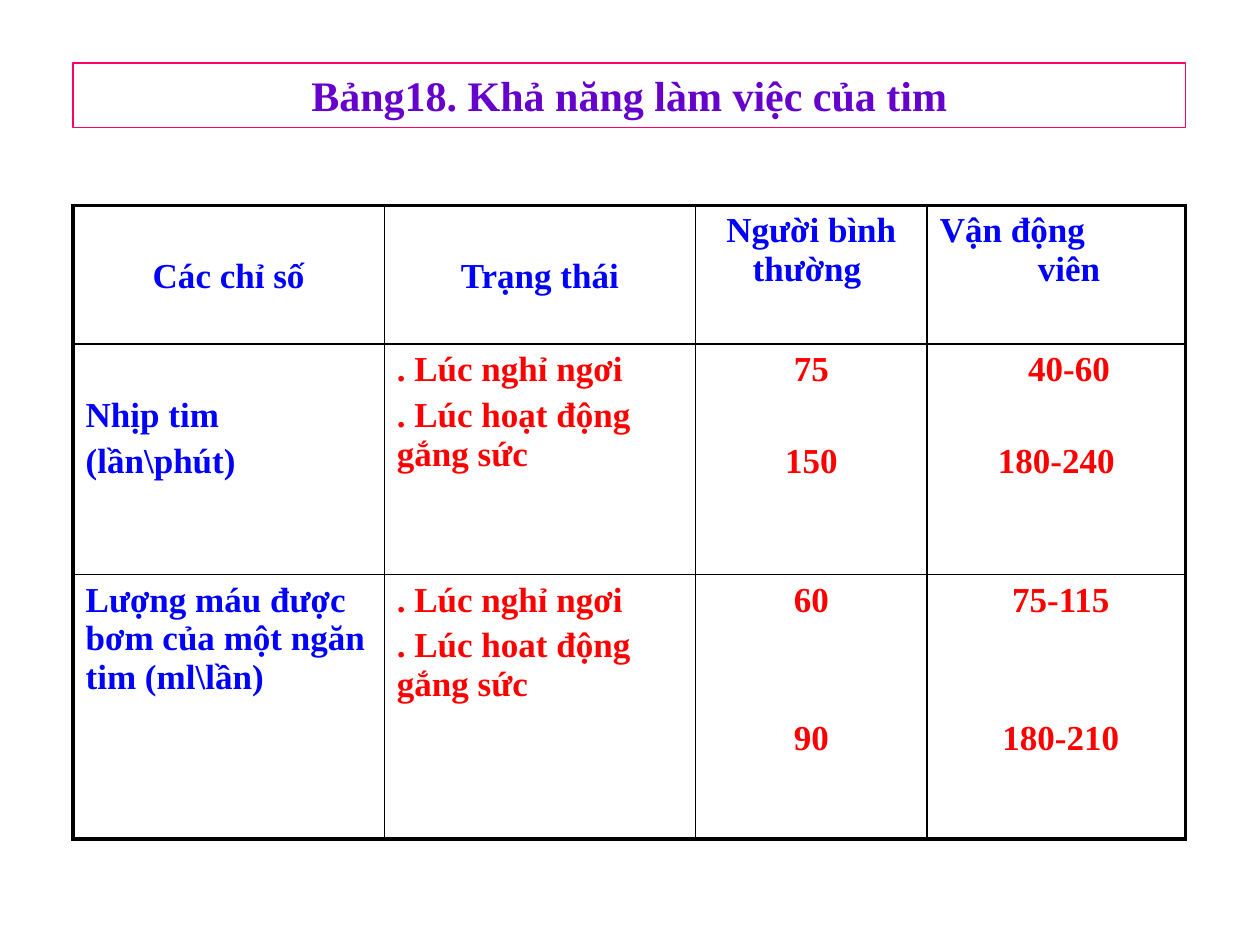
"""Build a slide with a table on the working capacity of the heart."""
from lxml import etree
from pptx import Presentation
from pptx.dml.color import RGBColor
from pptx.enum.shapes import MSO_SHAPE
from pptx.enum.text import MSO_ANCHOR, PP_ALIGN
from pptx.oxml.ns import qn
from pptx.util import Inches, Pt

LEFT, CENTER = PP_ALIGN.LEFT, PP_ALIGN.CENTER
MIDDLE = MSO_ANCHOR.MIDDLE
RECTANGLE = MSO_SHAPE.RECTANGLE
FONT = "Times New Roman"
WHITE = RGBColor(0xFF, 0xFF, 0xFF)
BLACK = RGBColor(0, 0, 0)
BLUE = RGBColor(0, 0, 0xFF)
RED = RGBColor(0xFF, 0, 0)
PURPLE = RGBColor(0x66, 0, 0xCC)
PINK = RGBColor(0xFF, 0, 0x66)

TITLE = "Bảng18. Khả năng làm việc của tim"
COLUMN_WIDTHS = [2.47, 2.47, 1.84, 2.05]
ROW_HEIGHTS = [1.1, 1.83, 2.1]
TEXT_SIZE = 20
PARAGRAPH_GAP = 4
LINE_STEP = 26.3
INNER_BORDER, OUTER_BORDER = 1, 2.25

# Each cell: colour, empty lines above, paragraphs of (text, alignment, space before, indent)
AFTER_ONE = PARAGRAPH_GAP + LINE_STEP
AFTER_TWO = PARAGRAPH_GAP + 2 * LINE_STEP
ROWS = [
    [
        (BLUE, 1, [("Các chỉ số", CENTER, PARAGRAPH_GAP, 0)]),
        (BLUE, 1, [("Trạng thái", CENTER, PARAGRAPH_GAP, 0)]),
        (BLUE, 0, [("Người bình thường ", CENTER, PARAGRAPH_GAP, 0)]),
        (BLUE, 0, [("Vận động", LEFT, PARAGRAPH_GAP, 0), ("viên", CENTER, 0, 0.2)]),
    ],
    [
        (BLUE, 1, [("Nhịp tim", LEFT, PARAGRAPH_GAP, 0),
                   ("(lần\\phút)", LEFT, PARAGRAPH_GAP, 0)]),
        (RED, 0, [(". Lúc nghỉ ngơi", LEFT, PARAGRAPH_GAP, 0),
                  (". Lúc hoạt động gắng sức", LEFT, PARAGRAPH_GAP, 0)]),
        (RED, 0, [("75", CENTER, PARAGRAPH_GAP, 0), ("150", CENTER, AFTER_ONE, 0)]),
        (RED, 0, [("40-60", CENTER, PARAGRAPH_GAP, 0.2),
                  ("180-240", CENTER, AFTER_ONE, 0)]),
    ],
    [
        (BLUE, 0, [("Lượng máu được bơm của một ngăn tim (ml\\lần)", LEFT, PARAGRAPH_GAP, 0)]),
        (RED, 0, [(". Lúc nghỉ ngơi", LEFT, PARAGRAPH_GAP, 0),
                  (". Lúc hoat động gắng sức", LEFT, PARAGRAPH_GAP, 0)]),
        (RED, 0, [("60", CENTER, PARAGRAPH_GAP, 0), ("90", CENTER, AFTER_TWO, 0)]),
        (RED, 0, [("75-115", CENTER, PARAGRAPH_GAP, 0.07),
                  ("180-210", CENTER, AFTER_TWO, 0.07)]),
    ],
]


def add_text(paragraph, text, size, color, alignment):
    paragraph.alignment = alignment
    run = paragraph.add_run()
    run.text = text
    run.font.name = FONT
    run.font.size = Pt(size)
    run.font.bold = True
    run.font.color.rgb = color


def set_borders(cell, widths):
    properties = cell._tc.get_or_add_tcPr()
    for position, (side, width) in enumerate(widths.items()):
        border = etree.Element(qn(f"a:ln{side}"), w=str(Pt(width)))
        fill = etree.SubElement(border, qn("a:solidFill"))
        etree.SubElement(fill, qn("a:srgbClr"), val=str(BLACK))
        properties.insert(position, border)


def fill_cell(cell, color, empty_lines, paragraphs):
    cell.fill.background()
    cell.margin_left = cell.margin_right = Inches(0.1)
    cell.margin_top = Inches(0.05) + Pt(empty_lines * LINE_STEP)
    cell.margin_bottom = Inches(0.05)
    frame = cell.text_frame
    for number, (text, alignment, space, indent) in enumerate(paragraphs):
        paragraph = frame.add_paragraph() if number else frame.paragraphs[0]
        paragraph.space_before = Pt(space)
        add_text(paragraph, text, TEXT_SIZE, color, alignment)
        if indent:
            paragraph._p.get_or_add_pPr().set("marL", str(Inches(indent)))


def add_heart_table(slide):
    last_row, last_column = len(ROW_HEIGHTS) - 1, len(COLUMN_WIDTHS) - 1
    table = slide.shapes.add_table(
        len(ROW_HEIGHTS), len(COLUMN_WIDTHS), Inches(0.58), Inches(1.63),
        Inches(sum(COLUMN_WIDTHS)), Inches(sum(ROW_HEIGHTS))).table
    table.first_row = table.horz_banding = False
    for column, width in zip(table.columns, COLUMN_WIDTHS):
        column.width = Inches(width)
    for row, height in zip(table.rows, ROW_HEIGHTS):
        row.height = Inches(height)
    for r, contents in enumerate(ROWS):
        for c, content in enumerate(contents):
            cell = table.cell(r, c)
            fill_cell(cell, *content)
            outer = {"L": c == 0, "R": c == last_column, "T": r == 0, "B": r == last_row}
            set_borders(cell, {side: OUTER_BORDER if edge else INNER_BORDER
                               for side, edge in outer.items()})


def add_title(slide):
    title = slide.shapes.add_shape(
        RECTANGLE, Inches(0.58), Inches(0.5), Inches(8.83), Inches(0.51))
    title.shadow.inherit = False
    title.fill.solid()
    title.fill.fore_color.rgb = WHITE
    title.line.color.rgb = PINK
    title.line.width = Pt(0.75)
    title.text_frame.word_wrap = True
    title.text_frame.vertical_anchor = MIDDLE
    add_text(title.text_frame.paragraphs[0], TITLE, 24, PURPLE, CENTER)


def main():
    presentation = Presentation()
    presentation.slide_width = Inches(10)
    presentation.slide_height = Inches(7.5)
    slide = presentation.slides.add_slide(presentation.slide_layouts[6])
    add_heart_table(slide)
    add_title(slide)
    presentation.save("out.pptx")


if __name__ == "__main__":
    main()
